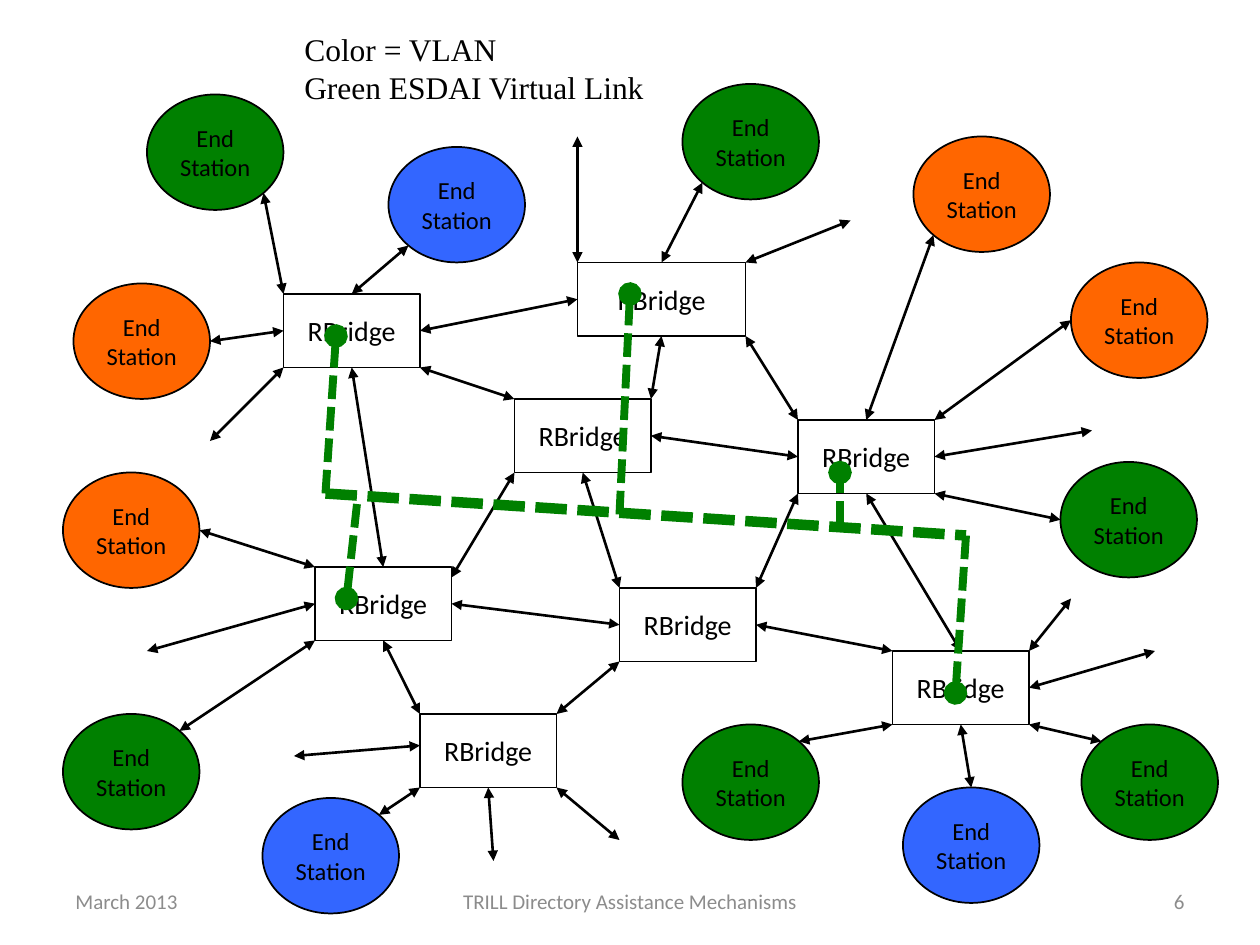
"""Build the slide of bridges and end stations joined by a green virtual link."""
from pptx import Presentation
from pptx.dml.color import RGBColor as RGB
from pptx.enum.dml import MSO_LINE
from pptx.enum.shapes import MSO_CONNECTOR as CONN, MSO_SHAPE as SHAPE
from pptx.enum.text import MSO_ANCHOR as ANCHOR, PP_ALIGN as ALIGN
from pptx.oxml.ns import qn
from pptx.util import Inches, Pt
from lxml.etree import SubElement

THEME = {
    "black": "000000", "grey": "8C8C8C",
    "green": "008000", "orange": "FF6600", "blue": "3366FF",
    "body": "Calibri", "title": "Times New Roman",
    "title_pt": 18, "bridge_pt": 16, "station_pt": 14, "footer_pt": 12,
    "outline_pt": 1, "link_pt": 1.5, "branch_pt": 4.5, "trunk_pt": 6,
}
COLS, ROWS = 120, 90
BRIDGE_W, BRIDGE_H = 13, 7
STATION_W, STATION_H = 13, 11

TITLE = ["Color = VLAN", "Green ESDAI Virtual Link"]
FOOTERS = [
    ("March 2013", 6, 28, ALIGN.LEFT),
    ("TRILL Directory Assistance Mechanisms", 41, 38, ALIGN.CENTER),
    ("6", 86, 28, ALIGN.RIGHT),
]
BRIDGES = {
    "R1": (27, 28), "R2": (49, 38), "R3": (55, 25), "R4": (30, 54),
    "R5": (76, 40), "R6": (59, 56), "R7": (85, 62), "R8": (40, 68),
}
WIDE_BRIDGES = {"R3": 16}
STATIONS = {
    "green": {"G1": (14, 9), "G2": (101, 44), "G3": (103, 69),
              "G4": (65, 69), "G5": (6, 68), "G6": (65, 8)},
    "orange": {"O1": (7, 27), "O2": (6, 45), "O3": (87, 13), "O4": (102, 25)},
    "blue": {"B1": (37, 14), "B2": (25, 76), "B3": (86, 75)},
}
LINKS = [
    ("R3 se", "R5 nw"), ("R1 e", "R3 w"), ("R2 e", "R5 w"), ("R2 ne", "R3 s"),
    ("R1 se", "R2 nw"), ((43, 55), "R2 sw"), ("R6 e", "R7 nw"), ("R5 s", "R7 n"),
    ("R6 ne", "R5 sw"), ("R2 s", "R6 nw"), ("R1 s", "R4 n"), ("R4 e", "R6 w"),
    ("R8 ne", "R6 sw"), ("R4 s", "R8 nw"),
    ("G1 se", "R1 nw"), ("O1 e", "R1 w"), ("O2 e", "R4 nw"), ("G5 ne", "R4 sw"),
    ("B1 sw", "R1 n"), ("B2 ne", "R8 sw"), ("R5 n", "O3 sw"), ("R5 ne", "O4 w"),
    ("R5 se", "G2 w"), ("R7 se", "G3 nw"), ("B3 n", "R7 s"), ("G4 ne", "R7 sw"),
    ("R3 n", "G6 sw"),
    ((14, 62), "R4 w"), ((28, 72), (40, 71)), ("R5 e", (104, 41)),
    ((20, 42), "R1 sw"), ("R7 e", (110, 62)), ("R7 ne", (102, 57)),
    ((47, 82), "R8 s"), ("R8 se", (59, 80)), ("R3 ne", (81, 21)),
    ("R3 nw", (55, 13)),
]
TRUNK = ((31, 47), (92, 51))
BRANCHES = [
    ((31, 47), (32, 32)), ((34, 48), (33, 57)), ((59, 49), (60, 28)),
    ((80, 50), (80, 45)), ((92, 51), (91, 66)),
]
SIDES = {
    "n": (0, -1), "s": (0, 1), "w": (-1, 0), "e": (1, 0),
    "nw": (-1, -1), "ne": (1, -1), "sw": (-1, 1), "se": (1, 1),
}

prs = Presentation()
prs.slide_width, prs.slide_height = Inches(10), Inches(7.5)
s = prs.slides.add_slide(prs.slide_layouts[6])
frames = {}


def cells(*values):
    return [int(prs.slide_width * v / COLS) for v in values]


def color(name):
    return RGB.from_string(THEME[name])


def write(tf, lines, size, font="body", ink="black", align=ALIGN.CENTER):
    tf.word_wrap = True
    for i, line in enumerate(lines):
        p = tf.paragraphs[0] if i == 0 else tf.add_paragraph()
        p.text, p.alignment = line, align
        p.font.size, p.font.name = Pt(THEME[size]), THEME[font]
        p.font.color.rgb = color(ink)


def add_node(name, kind, box, text, size, fill=None):
    sp = s.shapes.add_shape(kind, *cells(*box))
    sp.shadow.inherit = False
    if fill:
        sp.fill.solid()
        sp.fill.fore_color.rgb = color(fill)
    else:
        sp.fill.background()
    sp.line.color.rgb, sp.line.width = color("black"), Pt(THEME["outline_pt"])
    tf = sp.text_frame
    tf.margin_left = tf.margin_right = tf.margin_top = tf.margin_bottom = 0
    tf.vertical_anchor = ANCHOR.MIDDLE
    write(tf, [text], size)
    frames[name] = (*box, kind == SHAPE.OVAL)


def locate(end):
    if isinstance(end, tuple):
        return end
    name, side = end.split()
    x, y, w, h, is_round = frames[name]
    dx, dy = SIDES[side]
    reach = 0.5 ** 0.5 if is_round and dx and dy else 1
    return x + w / 2 * (1 + dx * reach), y + h / 2 * (1 + dy * reach)


def add_link(start, end, width, ink="black", dash=None, head=None, tail=None):
    c = s.shapes.add_connector(CONN.STRAIGHT, *cells(*locate(start), *locate(end)))
    c.line.color.rgb, c.line.width = color(ink), Pt(THEME[width])
    if dash:
        c.line.dash_style = dash
    ln = c.line._get_or_add_ln()
    for tag, kind in (("a:headEnd", head), ("a:tailEnd", tail)):
        if kind:
            SubElement(ln, qn(tag), type=kind, w="med", len="med")
    SubElement(c._element.spPr, qn("a:effectLst"))


for text, x, w, align in FOOTERS:
    tf = s.shapes.add_textbox(*cells(x, 83.4, w, 4.8)).text_frame
    tf.vertical_anchor = ANCHOR.MIDDLE
    write(tf, [text], "footer_pt", ink="grey", align=align)

for name, (x, y) in BRIDGES.items():
    box = (x, y, WIDE_BRIDGES.get(name, BRIDGE_W), BRIDGE_H)
    add_node(name, SHAPE.RECTANGLE, box, "RBridge", "bridge_pt")

for fill, group in STATIONS.items():
    for name, (x, y) in group.items():
        box = (x, y, STATION_W, STATION_H)
        add_node(name, SHAPE.OVAL, box, "End Station", "station_pt", fill)

for start, end in LINKS:
    add_link(start, end, "link_pt", head="triangle", tail="triangle")

add_link(*TRUNK, "trunk_pt", "green", MSO_LINE.SQUARE_DOT)
for start, end in BRANCHES:
    add_link(start, end, "branch_pt", "green", MSO_LINE.SQUARE_DOT, tail="oval")

tf = s.shapes.add_textbox(*cells(27.8, 2.3, 38, 8.5)).text_frame
write(tf, TITLE, "title_pt", font="title", align=ALIGN.LEFT)

prs.save("out.pptx")
